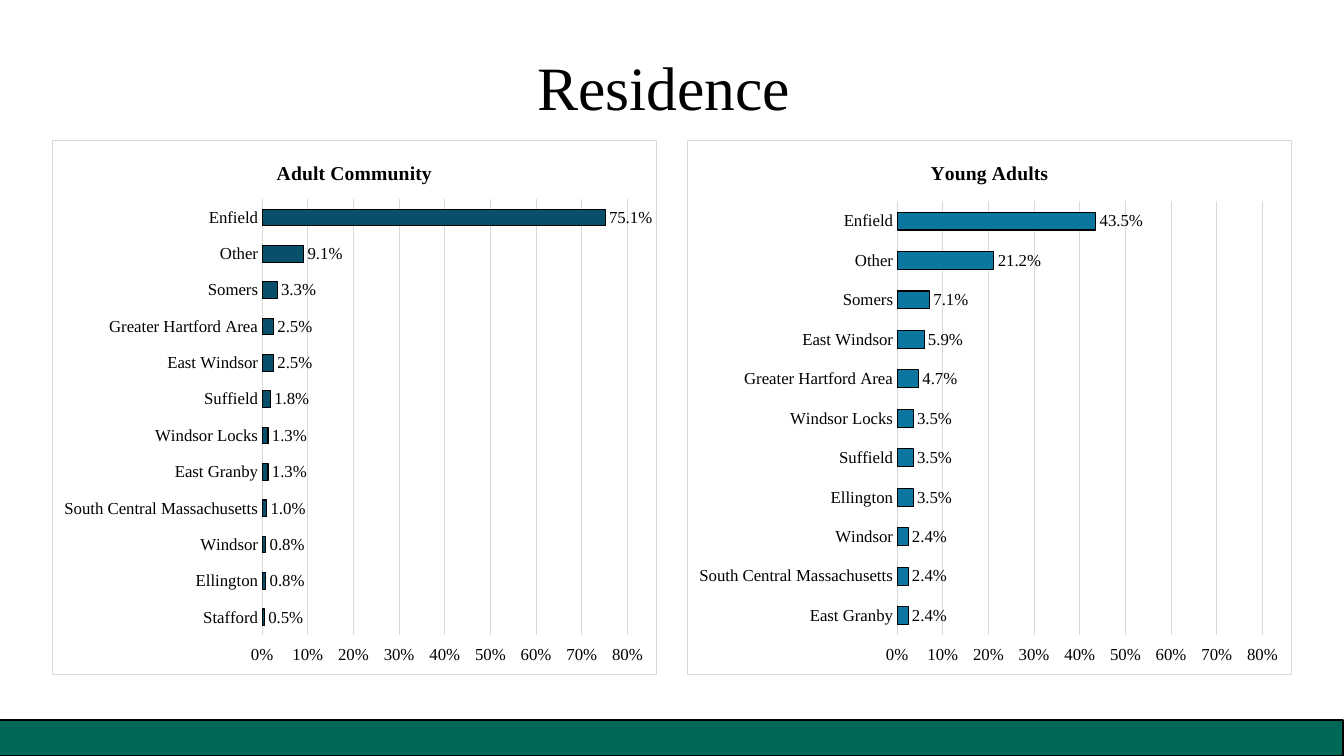
from dataclasses import dataclass

from lxml import etree
from pptx import Presentation
from pptx.chart.data import CategoryChartData
from pptx.dml.color import RGBColor
from pptx.enum.chart import XL_CHART_TYPE as ChartType
from pptx.enum.chart import XL_LABEL_POSITION as LabelPos
from pptx.enum.chart import XL_TICK_LABEL_POSITION as TickLabelPos
from pptx.enum.chart import XL_TICK_MARK as TickMark
from pptx.enum.shapes import MSO_SHAPE as Shape
from pptx.enum.text import MSO_ANCHOR as Anchor
from pptx.enum.text import PP_ALIGN as Align
from pptx.oxml import parse_xml
from pptx.oxml.ns import nsdecls, qn
from pptx.util import Emu, Pt

SLIDE_W, SLIDE_H = 1344, 756
EMU_PER_PX = 12192000 / SLIDE_W
FONT = "Times New Roman"
BLACK, WHITE, GRID, GREEN = "000000", "FFFFFF", "D9D9D9", "006857"
CHART_TOP, CHART_W, CHART_H = 140, 605, 535
PLOT_LEFT, PLOT_W, PLOT_BOTTOM = 210, 366, 496


@dataclass(frozen=True)
class ResidenceChart:
    title: str
    series: str
    left: int
    plot_top: int
    color: str
    shares: dict[str, float]


CHARTS = [
    ResidenceChart("Adult Community", "Series 1", 52, 59, "084F6A", {
        "Stafford": 0.005, "Ellington": 0.008, "Windsor": 0.008,
        "South Central Massachusetts": 0.01, "East Granby": 0.013,
        "Windsor Locks": 0.013, "Suffield": 0.018, "East Windsor": 0.025,
        "Greater Hartford Area": 0.025, "Somers": 0.033, "Other": 0.091,
        "Enfield": 0.751,
    }),
    ResidenceChart("Young Adults", "Young Adults", 687, 61, "0B76A0", {
        "East Granby": 0.024, "South Central Massachusetts": 0.024,
        "Windsor": 0.024, "Ellington": 0.035, "Suffield": 0.035,
        "Windsor Locks": 0.035, "Greater Hartford Area": 0.047,
        "East Windsor": 0.059, "Somers": 0.071, "Other": 0.212,
        "Enfield": 0.435,
    }),
]


def px(n: int) -> Emu:
    return Emu(round(n * EMU_PER_PX))


def rgb(color: str) -> RGBColor:
    return RGBColor.from_string(color)


def set_fill(fill, color: str) -> None:
    fill.solid()
    fill.fore_color.rgb = rgb(color)


def set_line(line, color: str, width: float = 0.75) -> None:
    set_fill(line.fill, color)
    line.width = Pt(width)


def set_font(font, size: float, bold: bool = False, color: str = BLACK) -> None:
    font.name, font.size, font.bold = FONT, Pt(size), bold
    font.color.rgb = rgb(color)


def write_text(tf, text: str, *, size: float, bold: bool = False,
               align: Align | None = None) -> None:
    p = tf.paragraphs[0]
    if align is not None:
        p.alignment = align
    r = p.add_run()
    r.text = text
    set_font(r.font, size, bold)


def frame_chart(chart) -> None:
    """Give the chart area its white fill and thin border."""
    sp_pr = parse_xml(
        f'<c:spPr {nsdecls("c", "a")}>'
        f'<a:solidFill><a:srgbClr val="{WHITE}"/></a:solidFill>'
        f'<a:ln w="{Pt(0.75)}"><a:solidFill><a:srgbClr val="{GRID}"/></a:solidFill></a:ln>'
        '</c:spPr>')
    chart.element.find(qn("c:chart")).addnext(sp_pr)


def place_plot(chart, top: int) -> None:
    """Fix the inner plot area, measured from the chart's corner."""
    area = chart.element.find(".//" + qn("c:plotArea"))
    for old in area.findall(qn("c:layout")):
        area.remove(old)
    layout = parse_xml(f'<c:layout {nsdecls("c")}><c:manualLayout/></c:layout>')
    settings = {
        "layoutTarget": "inner", "xMode": "edge", "yMode": "edge",
        "x": PLOT_LEFT / CHART_W, "y": top / CHART_H,
        "w": PLOT_W / CHART_W, "h": (PLOT_BOTTOM - top) / CHART_H,
    }
    for name, value in settings.items():
        etree.SubElement(layout[0], qn(f"c:{name}")).set("val", str(value))
    area.insert(0, layout)


def format_axes(chart) -> None:
    for axis in (chart.category_axis, chart.value_axis):
        axis.major_tick_mark = axis.minor_tick_mark = TickMark.NONE
    cat, val = chart.category_axis, chart.value_axis
    set_line(cat.format.line, GRID)
    cat.has_major_gridlines = False
    val.minimum_scale, val.maximum_scale, val.major_unit = 0, 0.8, 0.1
    val.tick_label_position = TickLabelPos.LOW
    val.tick_labels.number_format = "0%"
    val.tick_labels.number_format_is_linked = False
    val.format.line.fill.background()
    val.has_major_gridlines = True
    set_line(val.major_gridlines.format.line, GRID)


def add_residence_chart(s, spec_: ResidenceChart) -> None:
    data = CategoryChartData(number_format="###0.0%")
    data.categories = list(spec_.shares)
    data.add_series(spec_.series, list(spec_.shares.values()))
    chart = s.shapes.add_chart(
        ChartType.BAR_CLUSTERED, px(spec_.left), px(CHART_TOP),
        px(CHART_W), px(CHART_H), data).chart
    set_font(chart.font, 12)
    chart.has_legend = False
    chart.has_title = True
    chart.chart_title.include_in_layout = False
    write_text(chart.chart_title.text_frame, spec_.title, size=14, bold=True)

    plot = chart.plots[0]
    plot.gap_width = 120
    plot.vary_by_categories = False
    bars = plot.series[0]
    set_fill(bars.format.fill, spec_.color)
    set_line(bars.format.line, BLACK)
    plot.has_data_labels = True
    labels = plot.data_labels
    labels.show_value = True
    labels.number_format = "###0.0%"
    labels.number_format_is_linked = False
    labels.position = LabelPos.OUTSIDE_END
    set_font(labels.font, 12)

    format_axes(chart)
    frame_chart(chart)
    place_plot(chart, spec_.plot_top)


def add_title(s, text: str) -> None:
    title = s.shapes.title
    title.left, title.top, title.width, title.height = map(px, (527, 43, 310, 85))
    tf = title.text_frame
    tf.word_wrap = True
    tf.vertical_anchor = Anchor.MIDDLE
    write_text(tf, text, size=44, align=Align.LEFT)


def add_footer_band(s) -> None:
    band = s.shapes.add_shape(Shape.RECTANGLE, px(-1), px(720), px(SLIDE_W), px(36))
    band.shadow.inherit = False
    set_fill(band.fill, GREEN)
    set_line(band.line, BLACK, 1.5)


def main() -> None:
    prs = Presentation()
    prs.slide_width, prs.slide_height = px(SLIDE_W), px(SLIDE_H)
    s = prs.slides.add_slide(prs.slide_layouts.get_by_name("Title Only"))
    set_fill(s.background.fill, WHITE)
    add_footer_band(s)
    add_title(s, "Residence")
    for residence_chart in CHARTS:
        add_residence_chart(s, residence_chart)
    prs.save("out.pptx")


if __name__ == "__main__":
    main()
